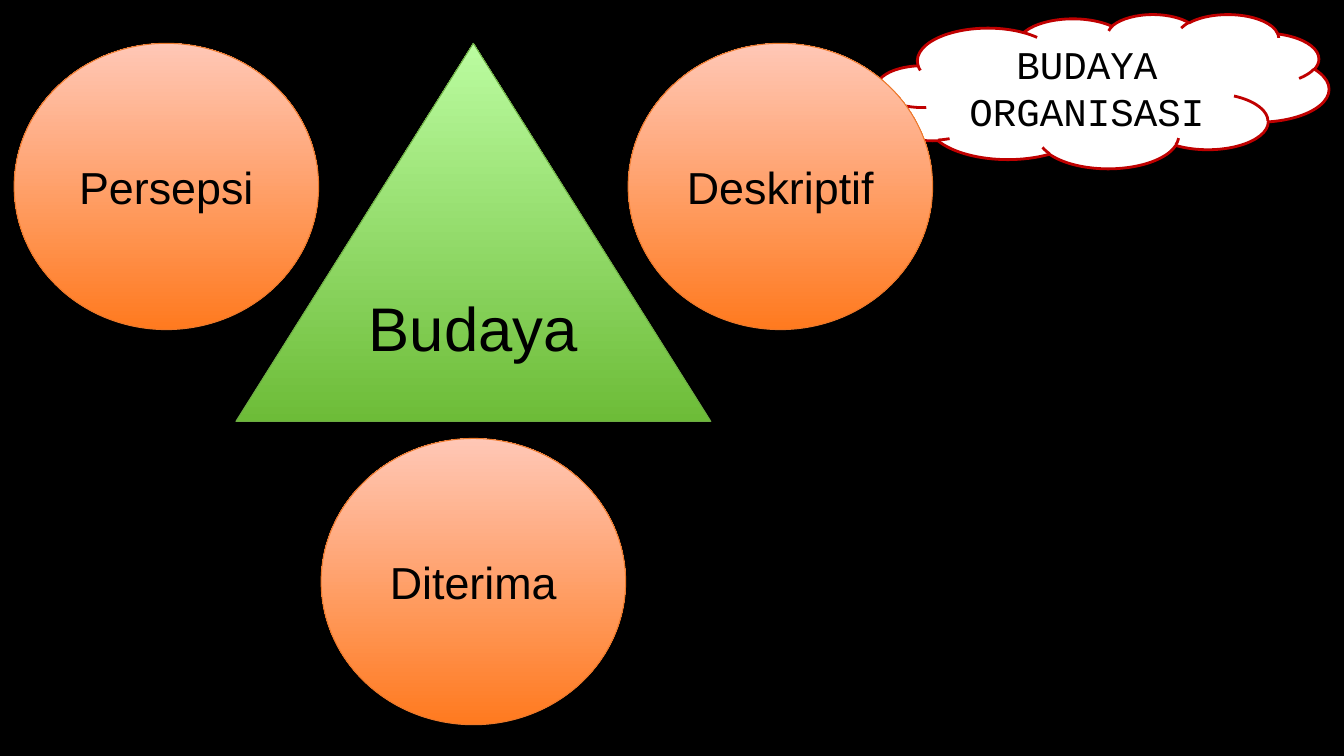
from pptx import Presentation
from pptx.dml.color import RGBColor
from pptx.enum.shapes import MSO_SHAPE
from pptx.enum.text import MSO_ANCHOR, PP_ALIGN
from pptx.util import Inches, Pt

BLACK = RGBColor(0x00, 0x00, 0x00)
WHITE = RGBColor(0xFF, 0xFF, 0xFF)
RED = RGBColor(0xC0, 0x00, 0x00)
GREEN = RGBColor(0x6D, 0xBC, 0x38)
MINT = RGBColor(0xBB, 0xFC, 0xA0)
LEAF = RGBColor(0x6D, 0xAC, 0x43)
ORANGE = RGBColor(0xFF, 0x7A, 0x1F)
PEACH = RGBColor(0xFF, 0xC7, 0xB6)
RUST = RGBColor(0xEC, 0x79, 0x2B)


def write(shape, text, size, font="Arial", color=BLACK):
    frame = shape.text_frame
    frame.word_wrap = True
    frame.vertical_anchor = MSO_ANCHOR.MIDDLE
    para = frame.paragraphs[0]
    para.alignment = PP_ALIGN.CENTER
    run = para.add_run()
    run.text = text
    run.font.size = Pt(size)
    run.font.name = font
    run.font.color.rgb = color


def draw(slide, kind, box, fills, edge, width=0.75):
    shape = slide.shapes.add_shape(kind, *map(Inches, box))
    shape.shadow.inherit = False
    shape.line.color.rgb = edge
    shape.line.width = Pt(width)
    if len(fills) == 1:
        shape.fill.solid()
        shape.fill.fore_color.rgb = fills[0]
    else:
        shape.fill.gradient()
        shape.fill.gradient_angle = 90
        for stop, color in zip(shape.fill.gradient_stops, fills):
            stop.color.rgb = color
    return shape


def add_cloud(slide, box):
    cloud = draw(slide, MSO_SHAPE.CLOUD, box, [WHITE], RED, 2)
    write(cloud, "BUDAYA ORGANISASI", 28, font="Courier New")


def add_culture(slide, box):
    left, top, width, height = box
    wide, high = 3.02, 2.84
    middle = left + (width - wide) / 2
    peak = draw(slide, MSO_SHAPE.ISOSCELES_TRIANGLE,
                (middle + wide / 2 - 2.355, top, 4.71, 3.75),
                [GREEN, MINT], LEAF)
    write(peak, "Budaya", 44)
    spots = [
        ("Persepsi", left, top),
        ("Deskriptif", left + width - wide, top),
        ("Diterima", middle, top + height - high),
    ]
    for text, x, y in spots:
        disc = draw(slide, MSO_SHAPE.OVAL, (x, y, wide, high),
                    [ORANGE, PEACH], RUST)
        write(disc, text, 32)


def main():
    deck = Presentation()
    deck.slide_width = Inches(13.33)
    deck.slide_height = Inches(7.5)
    slide = deck.slides.add_slide(deck.slide_layouts[6])
    slide.background.fill.solid()
    slide.background.fill.fore_color.rgb = BLACK
    add_cloud(slide, (8.7, 0.14, 4.48, 1.53))
    add_culture(slide, (0.14, 0.43, 9.11, 6.76))
    deck.save("out.pptx")


if __name__ == "__main__":
    main()
